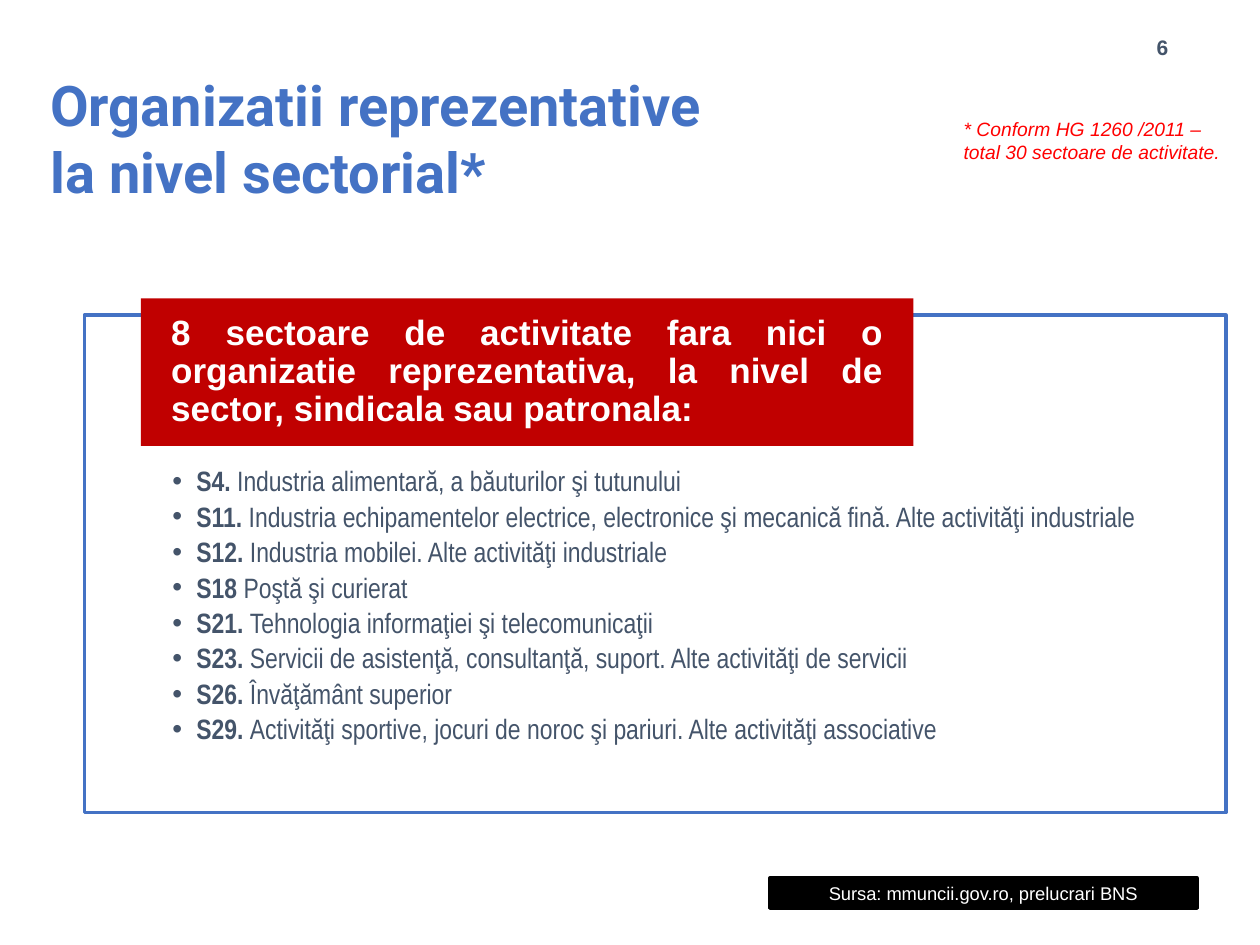
from lxml import etree
from pptx import Presentation
from pptx.dml.color import RGBColor
from pptx.enum import shapes, text
from pptx.oxml import ns
from pptx.util import Pt

COLOURS = {"blue": "4472C4", "slate": "44546A", "crimson": "C00000",
           "red": "FF0000", "black": "000000", "white": "FFFFFF"}
SECTORS = [
    ("S4.", "Industria alimentară, a băuturilor şi tutunului"),
    ("S11.", "Industria echipamentelor electrice, electronice şi mecanică fină. "
             "Alte activităţi industriale"),
    ("S12.", "Industria mobilei. Alte activităţi industriale"),
    ("S18", "Poştă şi curierat"),
    ("S21.", "Tehnologia informaţiei şi telecomunicaţii"),
    ("S23.", "Servicii de asistenţă, consultanţă, suport. Alte activităţi de servicii"),
    ("S26.", "Învăţământ superior"),
    ("S29.", "Activităţi sportive, jocuri de noroc şi pariuri. Alte activităţi associative"),
]


def colour(name):
    return RGBColor.from_string(COLOURS[name])


def add_box(slide, box, fill=None, line=None):
    shape = slide.shapes.add_shape(shapes.MSO_SHAPE.RECTANGLE, *map(Pt, box))
    shape.shadow.inherit = False
    if fill:
        shape.fill.solid()
        shape.fill.fore_color.rgb = colour(fill)
    else:
        shape.fill.background()
    if line:
        shape.line.color.rgb = colour(line)
        shape.line.width = Pt(2)
    else:
        shape.line.fill.background()
    return shape


def add_text_box(slide, box):
    return slide.shapes.add_textbox(*map(Pt, box))


def set_frame(shape, insets=(7.2, 3.6, 7.2, 3.6), anchor=text.MSO_ANCHOR.TOP):
    """Set wrapping, insets (left, top, right, bottom) and anchor; return the frame."""
    frame = shape.text_frame
    frame.word_wrap = True
    frame.vertical_anchor = anchor
    (frame.margin_left, frame.margin_top,
     frame.margin_right, frame.margin_bottom) = map(Pt, insets)
    return frame


def add_run(paragraph, words, size, colour_name, font="Arial", bold=False, italic=False):
    run = paragraph.add_run()
    run.text = words
    run.font.name = font
    run.font.size = Pt(size)
    run.font.bold = bold
    run.font.italic = italic
    run.font.color.rgb = colour(colour_name)


def add_bullet(paragraph, indent):
    properties = paragraph._p.get_or_add_pPr()
    properties.set("marL", str(Pt(indent)))
    properties.set("indent", str(-Pt(indent)))
    bullet_font = etree.SubElement(properties, ns.qn("a:buFont"))
    bullet_font.set("typeface", "Arial")
    etree.SubElement(properties, ns.qn("a:buChar")).set("char", "•")


def add_title(slide, box):
    frame = set_frame(add_text_box(slide, box), (14.4, 3.6, 0, 3.6), text.MSO_ANCHOR.MIDDLE)
    add_run(frame.paragraphs[0], "Organizatii reprezentative la nivel sectorial*",
            32, "blue", "Roboto", bold=True)


def add_page_number(slide, box):
    frame = set_frame(add_text_box(slide, box), anchor=text.MSO_ANCHOR.BOTTOM)
    paragraph = frame.paragraphs[0]
    paragraph.alignment = text.PP_ALIGN.CENTER
    add_run(paragraph, "6", 12, "slate", bold=True)


def add_footnote(slide, box):
    frame = set_frame(add_text_box(slide, box), (7.2, 3.6, 3.6, 3.6))
    add_run(frame.paragraphs[0],
            "* Conform HG 1260 /2011 – total 30 sectoare de activitate.",
            11, "red", italic=True)


def add_sector_panel(slide, box):
    """Outlined list of sectors with a heading banner over its top edge."""
    left, top, width, height = box
    frame = set_frame(add_box(slide, box, line="blue"), (50.4, 87.1, 50.4, 8.6))
    for index, (code, name) in enumerate(SECTORS):
        paragraph = frame.paragraphs[0] if index == 0 else frame.add_paragraph()
        paragraph.alignment = text.PP_ALIGN.LEFT
        paragraph.line_spacing = 0.9
        paragraph.space_after = Pt(3)
        add_bullet(paragraph, 13.7)
        add_run(paragraph, code + " ", 16, "slate", "Arial Narrow", bold=True)
        add_run(paragraph, name, 16, "slate", "Arial Narrow")

    banner = add_box(slide, (left + 32.4, top - 9.4, 441.4, 84.2), fill="crimson")
    frame = set_frame(banner, (17.3, 0, 17.3, 0), text.MSO_ANCHOR.MIDDLE)
    paragraph = frame.paragraphs[0]
    paragraph.alignment = text.PP_ALIGN.JUSTIFY
    paragraph.line_spacing = 0.9
    add_run(paragraph, "8 sectoare de activitate fara nici o organizatie reprezentativa, "
            "la nivel de sector, sindicala sau patronala:", 20, "white", bold=True)


def add_source_bar(slide, box):
    bar = add_box(slide, box, fill="black", line="black")
    paragraph = set_frame(bar, anchor=text.MSO_ANCHOR.MIDDLE).paragraphs[0]
    paragraph.alignment = text.PP_ALIGN.CENTER
    add_run(paragraph, "Sursa: mmuncii.gov.ro, prelucrari BNS", 10.5, "white")


def main():
    presentation = Presentation()
    presentation.slide_width, presentation.slide_height = Pt(720), Pt(540)
    slide = presentation.slides.add_slide(presentation.slide_layouts[6])
    add_title(slide, (14.4, 33.8, 419.8, 89.3))
    add_page_number(slide, (644.4, 13.7, 39.6, 23.8))
    add_sector_panel(slide, (48.2, 180, 652.3, 284.4))
    add_source_bar(slide, (439.9, 501.8, 244.1, 17.3))
    add_footnote(slide, (543.6, 63.4, 161.3, 33.8))
    presentation.save("out.pptx")


if __name__ == "__main__":
    main()
